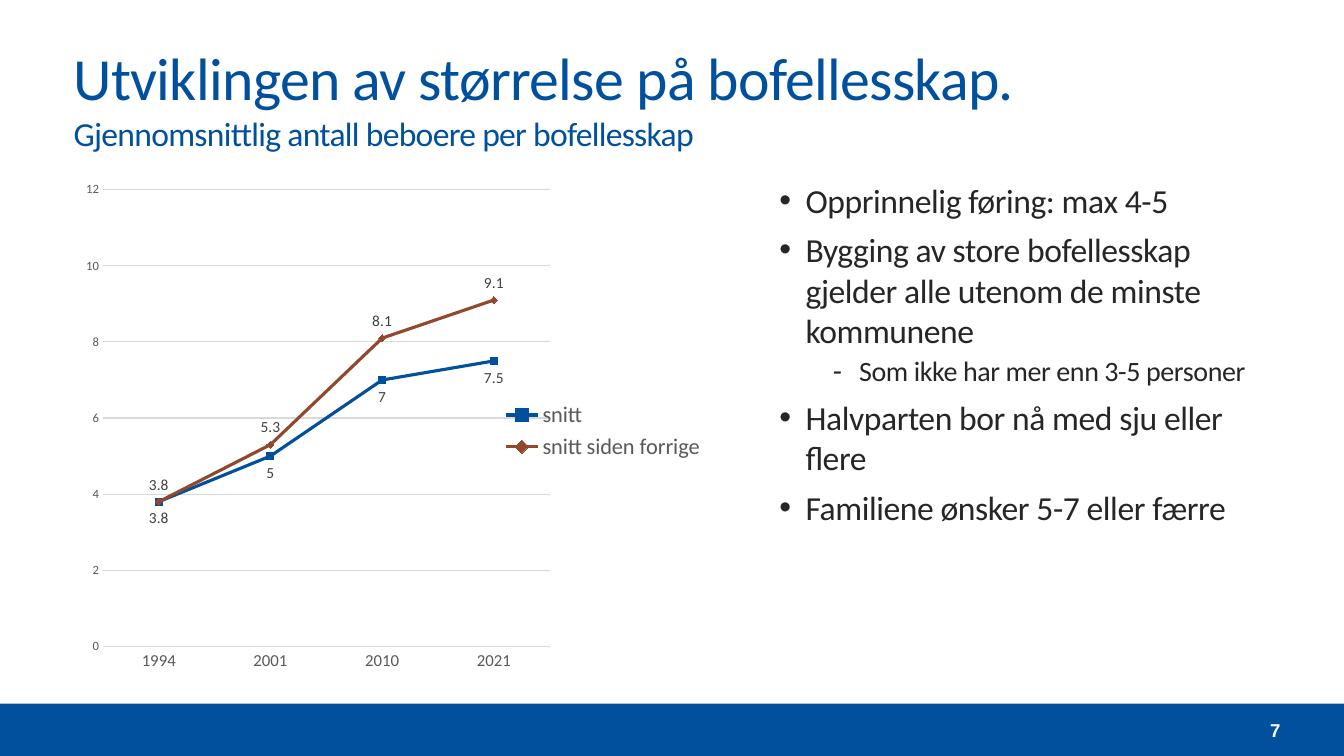
from lxml import etree
from pptx import Presentation
from pptx.chart.data import CategoryChartData
from pptx.dml.color import RGBColor
from pptx.enum.chart import XL_CHART_TYPE as ChartType
from pptx.enum.chart import XL_LABEL_POSITION as LabelPosition
from pptx.enum.chart import XL_LEGEND_POSITION as LegendPosition
from pptx.enum.chart import XL_TICK_MARK as TickMark
from pptx.enum.shapes import MSO_SHAPE as ShapeKind
from pptx.enum.text import MSO_ANCHOR as Anchor
from pptx.enum.text import MSO_AUTO_SIZE as AutoSize
from pptx.enum.text import PP_ALIGN as Align
from pptx.oxml import parse_xml
from pptx.oxml.ns import nsdecls, qn
from pptx.util import Inches, Pt

COLORS = {
    "blue": "00509E", "brown": "90492D", "white": "FFFFFF", "text": "262626",
    "label": "404040", "axis": "595959", "grid": "D9D9D9",
}
WIDTH, HEIGHT = Inches(13.33), Inches(7.5)
MARGIN = Inches(0.63)
CONTENT_WIDTH = WIDTH - 2 * MARGIN
CONTENT_TOP, CONTENT_HEIGHT = Inches(1.73), Inches(5.09)
CHART_SHARE, BODY_SHARE = 0.54, 0.42
FOOTER_HEIGHT = Inches(0.52)
FOOTER_TOP = HEIGHT - FOOTER_HEIGHT
INDENT = Inches(0.26)

YEARS = ["1994", "2001", "2010", "2021"]
SERIES = [
    ("snitt", [3.8, 5, 7, 7.5], "blue", LabelPosition.BELOW),
    ("snitt siden forrige ", [3.8, 5.3, 8.1, 9.1], "brown", LabelPosition.ABOVE),
]
POINTS = [
    ("Opprinnelig føring: max 4-5", 0),
    ("Bygging av store bofellesskap gjelder alle utenom de minste kommunene", 0),
    ("Som ikke har mer enn 3-5 personer", 1),
    ("Halvparten bor nå med sju eller flere", 0),
    ("Familiene ønsker 5-7 eller færre", 0),
]
# bullet, left margin, size, space before: one row for each level
LEVELS = [("•", INDENT, 24, 6.7), ("-", Inches(0.79), 20, 2.7)]


def rgb(name):
    return RGBColor.from_string(COLORS[name])


def style_font(font, size, color, name="Calibri", bold=False):
    font.name, font.size, font.bold = name, Pt(size), bold
    font.color.rgb = rgb(color)


def style_run(run, size, color, spacing):
    """Format a run; spacing is the tracking in points."""
    style_font(run.font, size, color)
    run.font._element.set("spc", str(round(spacing * 100)))


def place(shape, left, top, width, height):
    shape.left, shape.top = int(left), int(top)
    shape.width, shape.height = int(width), int(height)


def add_footer(slide, number):
    bar = slide.shapes.add_shape(ShapeKind.RECTANGLE, 0, FOOTER_TOP, WIDTH, FOOTER_HEIGHT)
    bar.shadow.inherit = False
    bar.fill.solid()
    bar.fill.fore_color.rgb = rgb("blue")
    bar.line.fill.background()

    width = Inches(0.95)
    box = slide.shapes.add_textbox(WIDTH - MARGIN - width, FOOTER_TOP, width, FOOTER_HEIGHT)
    frame = box.text_frame
    frame.margin_left = frame.margin_right = frame.margin_top = frame.margin_bottom = 0
    frame.word_wrap = True
    frame.vertical_anchor = Anchor.MIDDLE
    frame.text = number
    paragraph = frame.paragraphs[0]
    paragraph.alignment = Align.RIGHT
    style_font(paragraph.runs[0].font, 13.3, "white", "Arial", True)


def fill_title(title, heading, subheading):
    place(title, MARGIN, Inches(0.31), CONTENT_WIDTH, Inches(1.31))
    frame = title.text_frame
    frame.text = f"{heading}\v{subheading}"
    frame.auto_size = AutoSize.NONE
    frame.vertical_anchor = Anchor.MIDDLE
    paragraph = frame.paragraphs[0]
    paragraph.alignment = Align.LEFT
    for run, size in zip(paragraph.runs, (42.7, 24)):
        style_run(run, size, "blue", -0.5)


def fill_body(body, points):
    width = CONTENT_WIDTH * BODY_SHARE
    place(body, WIDTH - MARGIN - width, CONTENT_TOP, width, CONTENT_HEIGHT)
    frame = body.text_frame
    frame.text = "\n".join(text for text, _ in points)
    frame.auto_size = AutoSize.NONE
    for index, (paragraph, (_, level)) in enumerate(zip(frame.paragraphs, points)):
        bullet, margin, size, space = LEVELS[level]
        paragraph.level = level
        paragraph.space_before = Pt(space if index else 0)
        properties = paragraph._p.get_or_add_pPr()
        properties.set("marL", str(margin))
        properties.set("indent", str(-INDENT))
        etree.SubElement(properties, qn("a:buChar")).set("char", bullet)
        style_run(paragraph.runs[0], size, "text", -0.3)


def set_plot_area(chart, **shares):
    """Fix the inner plot area, given as shares of the chart's size."""
    modes = "".join(f'<c:{tag} val="{value}"/>' for tag, value in
                    (("layoutTarget", "inner"), ("xMode", "edge"), ("yMode", "edge")))
    sizes = "".join(f'<c:{tag} val="{share}"/>' for tag, share in shares.items())
    layout = parse_xml(f'<c:layout {nsdecls("c")}><c:manualLayout>'
                       f'{modes}{sizes}</c:manualLayout></c:layout>')
    plot_area = chart._chartSpace.chart.plotArea
    for old in plot_area.findall(qn("c:layout")):
        plot_area.remove(old)
    plot_area.insert(0, layout)


def style_axes(chart):
    years, values = chart.category_axis, chart.value_axis
    for axis, size in ((years, 12), (values, 9)):
        axis.major_tick_mark = axis.minor_tick_mark = TickMark.NONE
        style_font(axis.tick_labels.font, size, "axis")
    values.minimum_scale, values.maximum_scale, values.major_unit = 0, 12, 2
    values.format.line.fill.background()
    for line in (years.format.line, values.major_gridlines.format.line):
        line.color.rgb = rgb("grid")
        line.width = Pt(0.75)


def style_series(series, color, position):
    series.smooth = False
    series.marker.style = None
    series.format.line.color.rgb = rgb(color)
    series.format.line.width = Pt(2.25)
    labels = series.data_labels
    labels.show_value = True
    labels.position = position
    style_font(labels.font, 11, "label")


def add_line_chart(slide):
    data = CategoryChartData()
    data.categories = YEARS
    for name, values, _, _ in SERIES:
        data.add_series(name, values)
    chart = slide.shapes.add_chart(
        ChartType.LINE, MARGIN, CONTENT_TOP,
        int(CONTENT_WIDTH * CHART_SHARE), CONTENT_HEIGHT, data).chart
    chart.has_title = False
    chart.font.name, chart.font.size = "Calibri", Pt(10)
    chart.plots[0].vary_by_categories = False
    chart.has_legend = True
    chart.legend.position = LegendPosition.RIGHT
    chart.legend.include_in_layout = False
    style_font(chart.legend.font, 16, "axis")
    style_axes(chart)
    for series, (_, _, color, position) in zip(chart.plots[0].series, SERIES):
        style_series(series, color, position)
    set_plot_area(chart, x=0.06, y=0.03, w=0.68, h=0.89)


def main():
    presentation = Presentation()
    presentation.slide_width, presentation.slide_height = WIDTH, HEIGHT
    slide = presentation.slides.add_slide(presentation.slide_layouts[1])
    add_footer(slide, "7")
    fill_title(slide.shapes.title, "Utviklingen av størrelse på bofellesskap. ",
               "Gjennomsnittlig antall beboere per bofellesskap")
    add_line_chart(slide)
    fill_body(slide.placeholders[1], POINTS)
    presentation.save("out.pptx")


if __name__ == "__main__":
    main()
